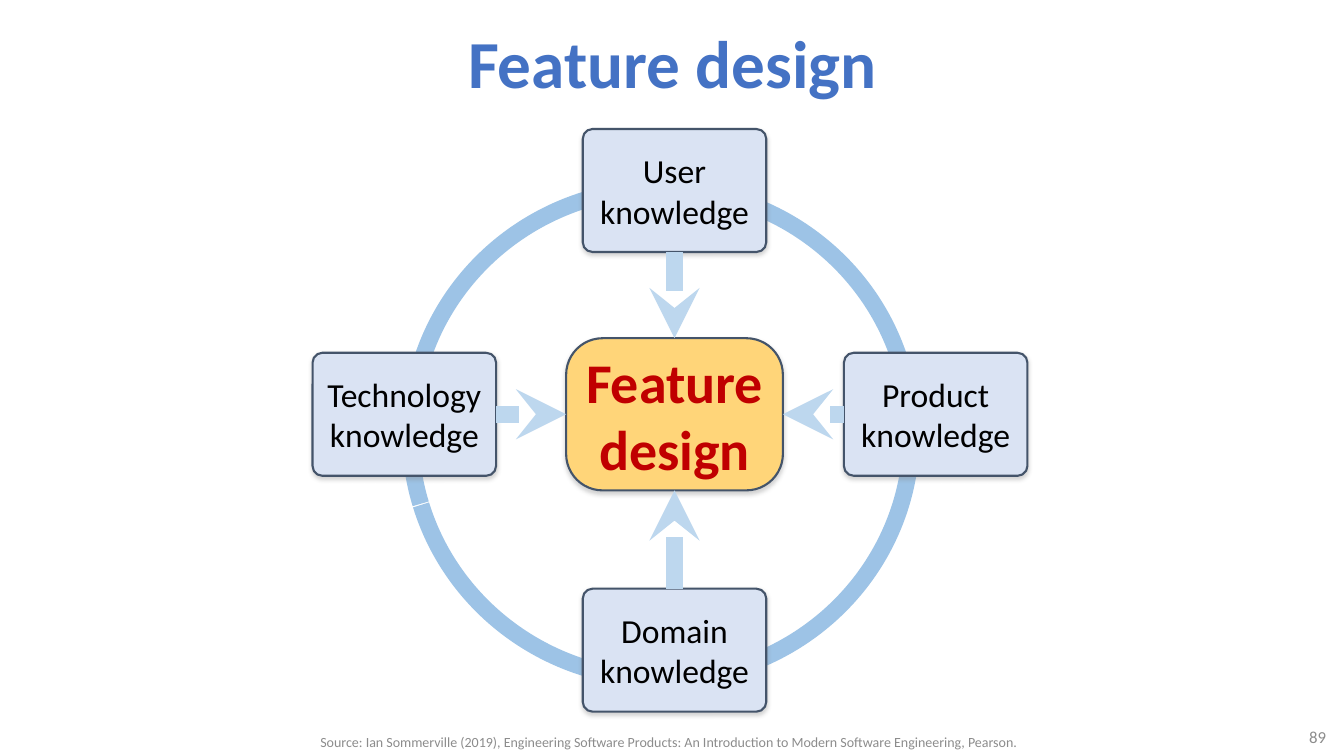
from dataclasses import dataclass

from lxml.etree import SubElement
from pptx import Presentation
from pptx.dml.color import RGBColor
from pptx.enum.shapes import MSO_CONNECTOR, MSO_SHAPE
from pptx.enum.text import MSO_ANCHOR, PP_ALIGN
from pptx.oxml.ns import qn
from pptx.util import Inches, Pt

TOP, LEFT, BOTTOM, RIGHT = range(4)

TITLE = "Feature design"
CORE = "Feature design"
PAGE_NUMBER = "89"
SOURCE = ("Source: Ian Sommerville (2019), Engineering Software Products: "
          "An Introduction to Modern Software Engineering, Pearson.")
KNOWLEDGE = [
    {"text": "User knowledge", "offset": (0, -2.22), "sides": (BOTTOM, TOP)},
    {"text": "Technology knowledge", "offset": (-2.68, 0), "sides": (RIGHT, LEFT)},
    {"text": "Domain knowledge", "offset": (0, 2.34), "sides": (TOP, BOTTOM)},
    {"text": "Product knowledge", "offset": (2.59, 0), "sides": (LEFT, RIGHT)},
]

SLIDE_SIZE = (13.33, 7.5)
CENTER = (6.69, 4.11)
CORE_SIZE = (2.15, 1.51)
KNOWLEDGE_SIZE = (1.82, 1.22)
RING_BOX = (4.07, 1.87, 4.97, 4.87)
RING_ANGLES = (163.77, 163.5)
ANGLE_UNIT = 0.6


@dataclass(frozen=True)
class Theme:
    font: str = "Calibri"
    title: str = "4472C4"
    muted: str = "8C8C8C"
    ring: str = "9DC3E6"
    arrow: str = "BDD7EE"
    outline: str = "44546A"
    core_fill: str = "FFD579"
    core_text: str = "C00000"
    knowledge_fill: str = "DAE3F3"
    knowledge_text: str = "000000"
    shadow: str = "808080"
    title_size: int = 48
    core_size: int = 40
    knowledge_size: int = 24
    number_size: int = 12
    source_size: int = 10
    band_width: int = 12
    outline_width: float = 1.5


THEME = Theme()


def color(value):
    return RGBColor.from_string(value)


def write(shape, text, size, text_color, bold=False, align=PP_ALIGN.CENTER, inset=None):
    frame = shape.text_frame
    frame.word_wrap = True
    frame.vertical_anchor = MSO_ANCHOR.MIDDLE
    if inset is not None:
        frame.margin_left = frame.margin_right = inset
        frame.margin_top = frame.margin_bottom = inset
    paragraph = frame.paragraphs[0]
    paragraph.alignment = align
    run = paragraph.add_run()
    run.text = text
    run.font.name = THEME.font
    run.font.size = Pt(size)
    run.font.bold = bold
    run.font.color.rgb = color(text_color)


def add_label(slide, box, *args, **options):
    write(slide.shapes.add_textbox(*map(Inches, box)), *args, **options)


def add_soft_shadow(shape):
    shape.shadow.inherit = False
    effects = shape._element.spPr.find(qn("a:effectLst"))
    shadow = SubElement(effects, qn("a:outerShdw"), blurRad=str(Pt(3.1)),
                        dist=str(Pt(1.8)), dir="5400000", rotWithShape="0")
    shade = SubElement(shadow, qn("a:srgbClr"), val=THEME.shadow)
    SubElement(shade, qn("a:alpha"), val="35000")


def add_ring(slide):
    ring = slide.shapes.add_shape(MSO_SHAPE.ARC, *map(Inches, RING_BOX))
    for index, angle in enumerate(RING_ANGLES):
        ring.adjustments[index] = angle * ANGLE_UNIT
    ring.fill.background()
    ring.line.color.rgb = color(THEME.ring)
    ring.line.width = Pt(THEME.band_width)
    ring.shadow.inherit = False


def add_card(slide, offset, size, rounding, fill, *args, **options):
    corner = [middle + shift - length / 2
              for middle, shift, length in zip(CENTER, offset, size)]
    card = slide.shapes.add_shape(MSO_SHAPE.ROUNDED_RECTANGLE, *map(Inches, (*corner, *size)))
    card.adjustments[0] = rounding
    card.fill.solid()
    card.fill.fore_color.rgb = color(fill)
    card.line.color.rgb = color(THEME.outline)
    card.line.width = Pt(THEME.outline_width)
    add_soft_shadow(card)
    write(card, *args, inset=0, **options)
    return card


def add_arrow(slide, start, end, sides):
    arrow = slide.shapes.add_connector(MSO_CONNECTOR.STRAIGHT, 0, 0, 0, 0)
    arrow.begin_connect(start, sides[0])
    arrow.end_connect(end, sides[1])
    arrow.line.color.rgb = color(THEME.arrow)
    arrow.line.width = Pt(THEME.band_width)
    properties = arrow._element.spPr
    SubElement(properties.find(qn("a:ln")), qn("a:tailEnd"), type="stealth")
    SubElement(properties, qn("a:effectLst"))


def main():
    presentation = Presentation()
    presentation.slide_width, presentation.slide_height = map(Inches, SLIDE_SIZE)
    slide = presentation.slides.add_slide(presentation.slide_layouts[6])

    add_label(slide, (2.17, 0.13, 9, 0.96), TITLE, THEME.title_size, THEME.title, bold=True)
    add_label(slide, (12.2, 7.18, 1.05, 0.26), PAGE_NUMBER, THEME.number_size,
              THEME.muted, align=PP_ALIGN.RIGHT)
    add_label(slide, (2.34, 7.22, 8.58, 0.28), SOURCE, THEME.source_size, THEME.muted)

    add_ring(slide)
    core = add_card(slide, (0, 0), CORE_SIZE, 0.24, THEME.core_fill, CORE,
                    THEME.core_size, THEME.core_text, bold=True)
    cards = [add_card(slide, item["offset"], KNOWLEDGE_SIZE, 0.08, THEME.knowledge_fill,
                      item["text"], THEME.knowledge_size, THEME.knowledge_text)
             for item in KNOWLEDGE]
    for item, card in zip(KNOWLEDGE, cards):
        add_arrow(slide, card, core, item["sides"])

    presentation.save("out.pptx")


if __name__ == "__main__":
    main()
